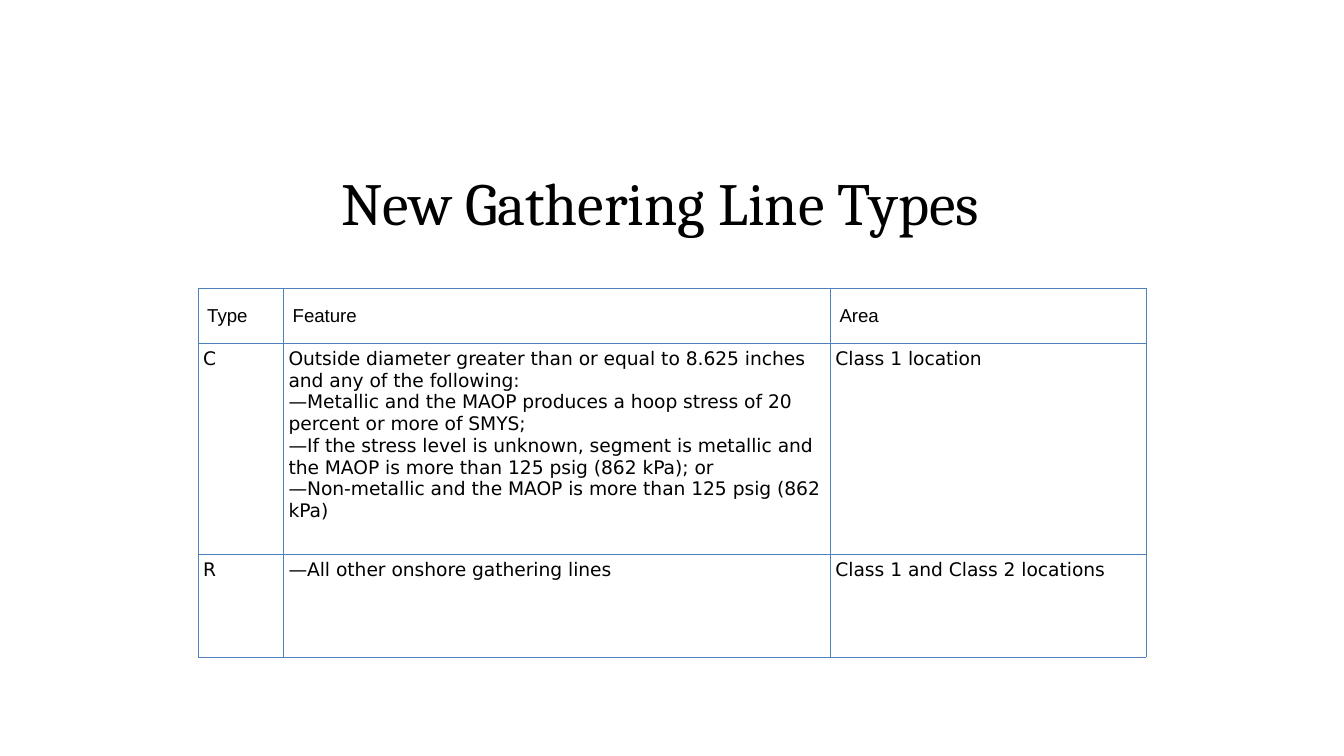
import pptx
import pptx.dml.color
import pptx.enum.text
import pptx.oxml
import pptx.oxml.ns
import pptx.util

Pt = pptx.util.Pt
ANCHOR = pptx.enum.text.MSO_ANCHOR

BLACK = pptx.dml.color.RGBColor(0x00, 0x00, 0x00)
BLUE = pptx.dml.color.RGBColor(0x4F, 0x81, 0xBD)

COLUMN_WIDTHS = [45.8, 293, 169]
ROW_HEIGHTS = [29.5, 113, 54.9]
LINE_TYPES = [
    ["Type", "Feature", "Area"],
    [
        "C",
        "Outside diameter greater than or equal to 8.625 inches and any of the following:\n"
        "—Metallic and the MAOP produces a hoop stress of 20 percent or more of SMYS;\n"
        "—If the stress level is unknown, segment is metallic and the MAOP is more than "
        "125 psig (862 kPa); or\n"
        "—Non-metallic and the MAOP is more than 125 psig (862 kPa)",
        "Class 1 location",
    ],
    ["R", "—All other onshore gathering lines", "Class 1 and Class 2 locations"],
]


def format_text(text_frame, font_name, size):
    for paragraph in text_frame.paragraphs:
        for run in paragraph.runs:
            run.font.name = font_name
            run.font.size = Pt(size)
            run.font.color.rgb = BLACK


def add_title(slide, text):
    title = slide.shapes.title
    title.left, title.top, title.width, title.height = Pt(95.8), Pt(74.2), Pt(516.2), Pt(67.7)
    title.text_frame.text = text
    title.text_frame.word_wrap = True
    title.text_frame.vertical_anchor = ANCHOR.MIDDLE
    title.text_frame.paragraphs[0].alignment = pptx.enum.text.PP_ALIGN.CENTER
    format_text(title.text_frame, "Cambria", 32)


def set_borders(cell, color, width):
    properties = cell._tc.get_or_add_tcPr()
    for side in ("lnL", "lnR", "lnT", "lnB"):
        properties.append(pptx.oxml.parse_xml(
            f'<a:{side} {pptx.oxml.ns.nsdecls("a")} w="{Pt(width)}">'
            f'<a:solidFill><a:srgbClr val="{color}"/></a:solidFill></a:{side}>'
        ))


def format_cell(cell, text, is_header):
    cell.text_frame.text = text
    format_text(cell.text_frame, "Arial" if is_header else "DejaVu Sans", 10)
    cell.vertical_anchor = ANCHOR.MIDDLE if is_header else ANCHOR.TOP
    cell.margin_left = cell.margin_right = Pt(4.8 if is_header else 2.6)
    cell.margin_top = cell.margin_bottom = Pt(2.4)
    set_borders(cell, BLUE, 0.38)
    cell.fill.background()


def add_line_table(slide, rows):
    frame = slide.shapes.add_table(
        len(rows), len(COLUMN_WIDTHS), Pt(106.2), Pt(154.6),
        Pt(sum(COLUMN_WIDTHS)), Pt(sum(ROW_HEIGHTS)),
    )
    table = frame.table
    table.first_row = False
    table.horz_banding = False
    for column, width in zip(table.columns, COLUMN_WIDTHS):
        column.width = Pt(width)
    for row, height in zip(table.rows, ROW_HEIGHTS):
        row.height = Pt(height)
    for row_index, texts in enumerate(rows):
        for column_index, text in enumerate(texts):
            format_cell(table.cell(row_index, column_index), text, row_index == 0)


def main():
    presentation = pptx.Presentation()
    presentation.slide_width = Pt(720)
    presentation.slide_height = Pt(405)
    # Title Only layout
    slide = presentation.slides.add_slide(presentation.slide_layouts[5])

    # Table of line types, then the heading above it
    add_line_table(slide, LINE_TYPES)
    add_title(slide, "New Gathering Line Types")

    presentation.save("out.pptx")


if __name__ == "__main__":
    main()
